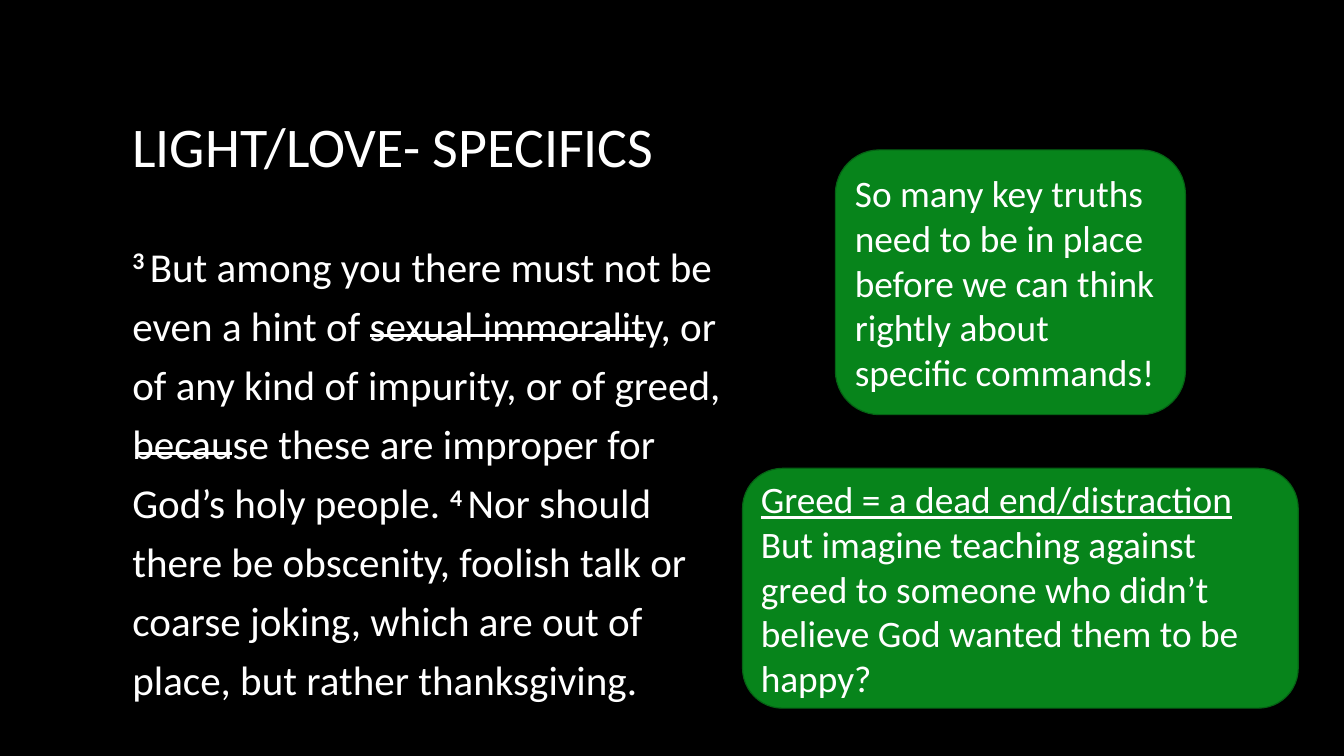
from lxml import etree
from pptx import Presentation
from pptx import util as u
from pptx.dml.color import RGBColor
from pptx.enum import shapes, text
from pptx.oxml.ns import qn

THEME = {
    "font": "Calibri",
    "background": RGBColor(0x00, 0x00, 0x00),
    "text": RGBColor(0xFF, 0xFF, 0xFF),
    "callout": RGBColor(0x07, 0x84, 0x1B),
    "callout_line": RGBColor(0x05, 0x62, 0x14),
    "title_size": 60,
    "body_size": 44,
    "callout_size": 40,
    "strike_width": 3,
    "outline_width": 1.25,
}

SLIDE_SIZE = (1440, 810)
TITLE = "LIGHT/LOVE- SPECIFICS"
TITLE_BOX = (134.6, 72.7, 1170, 175)
VERSES = [
    ("3", "But among you there must not be even a hint of sexual immorality, or of any kind "
          "of impurity, or of greed, because these are improper for God’s holy people. "),
    ("4", "Nor should there be obscenity, foolish talk or coarse joking, which are out of "
          "place, but rather thanksgiving."),
]
VERSES_BOX = (134.6, 244.1, 661, 514.8)
STRIKES = [(396.7, 692.6, 359.3), (146.2, 249.1, 486)]
CALLOUTS = [
    ((895, 160.6, 375.1, 283.7), [
        ("So many key truths need to be in place before we can think rightly about "
         "specific commands!", False),
    ]),
    ((795.6, 501.8, 595.4, 257), [
        ("Greed = a dead end/distraction", True),
        ("But imagine teaching against greed to someone who didn’t believe God wanted "
         "them to be happy?", False),
    ]),
]


def points(values):
    return [u.Pt(value) for value in values]


def style_run(run, size, bold=False, underline=False):
    run.font.name = THEME["font"]
    run.font.size = u.Pt(size)
    run.font.color.rgb = THEME["text"]
    run.font.bold = bold
    run.font.underline = underline


def prepare_placeholder(placeholder, box, anchor):
    placeholder.left, placeholder.top, placeholder.width, placeholder.height = points(box)
    frame = placeholder.text_frame
    frame.auto_size = text.MSO_AUTO_SIZE.NONE
    frame.word_wrap = True
    frame.vertical_anchor = anchor
    paragraph = frame.paragraphs[0]
    paragraph.alignment = text.PP_ALIGN.LEFT
    paragraph.space_before = u.Pt(0)
    return paragraph


def add_title(slide):
    paragraph = prepare_placeholder(slide.shapes.title, TITLE_BOX, text.MSO_ANCHOR.MIDDLE)
    paragraph.text = TITLE
    paragraph.line_spacing = 0.9
    style_run(paragraph.runs[0], THEME["title_size"])


def add_verses(slide):
    paragraph = prepare_placeholder(slide.placeholders[1], VERSES_BOX, text.MSO_ANCHOR.TOP)
    properties = paragraph._p.get_or_add_pPr()
    properties.set("marL", "0")
    properties.set("indent", "0")
    etree.SubElement(properties, qn("a:buNone"))
    paragraph.line_spacing = 1.2
    for number, verse in VERSES:
        number_run = paragraph.add_run()
        number_run.text = number + " "
        style_run(number_run, THEME["body_size"], bold=True)
        number_run._r.get_or_add_rPr().set("baseline", "30000")
        verse_run = paragraph.add_run()
        verse_run.text = verse
        style_run(verse_run, THEME["body_size"])


def add_strike(slide, left, right, y):
    line = slide.shapes.add_connector(
        shapes.MSO_CONNECTOR.STRAIGHT, *points((left, y, right, y)))
    line.line.color.rgb = THEME["text"]
    line.line.width = u.Pt(THEME["strike_width"])
    etree.SubElement(line._element.spPr, qn("a:effectLst"))


def add_callout(slide, box, lines):
    shape = slide.shapes.add_shape(shapes.MSO_SHAPE.ROUNDED_RECTANGLE, *points(box))
    shape.shadow.inherit = False
    shape.fill.solid()
    shape.fill.fore_color.rgb = THEME["callout"]
    shape.line.color.rgb = THEME["callout_line"]
    shape.line.width = u.Pt(THEME["outline_width"])
    frame = shape.text_frame
    frame.word_wrap = True
    frame.vertical_anchor = text.MSO_ANCHOR.MIDDLE
    frame.text = "\n".join(content for content, _ in lines)
    for paragraph, (_, underline) in zip(frame.paragraphs, lines):
        paragraph.alignment = text.PP_ALIGN.LEFT
        style_run(paragraph.runs[0], THEME["callout_size"], underline=underline)


def main():
    presentation = Presentation()
    presentation.slide_width, presentation.slide_height = points(SLIDE_SIZE)
    slide = presentation.slides.add_slide(presentation.slide_layouts[1])
    slide.background.fill.solid()
    slide.background.fill.fore_color.rgb = THEME["background"]
    add_title(slide)
    add_verses(slide)
    for strike, (box, lines) in zip(STRIKES, CALLOUTS):
        add_strike(slide, *strike)
        add_callout(slide, box, lines)
    presentation.save("out.pptx")


if __name__ == "__main__":
    main()
